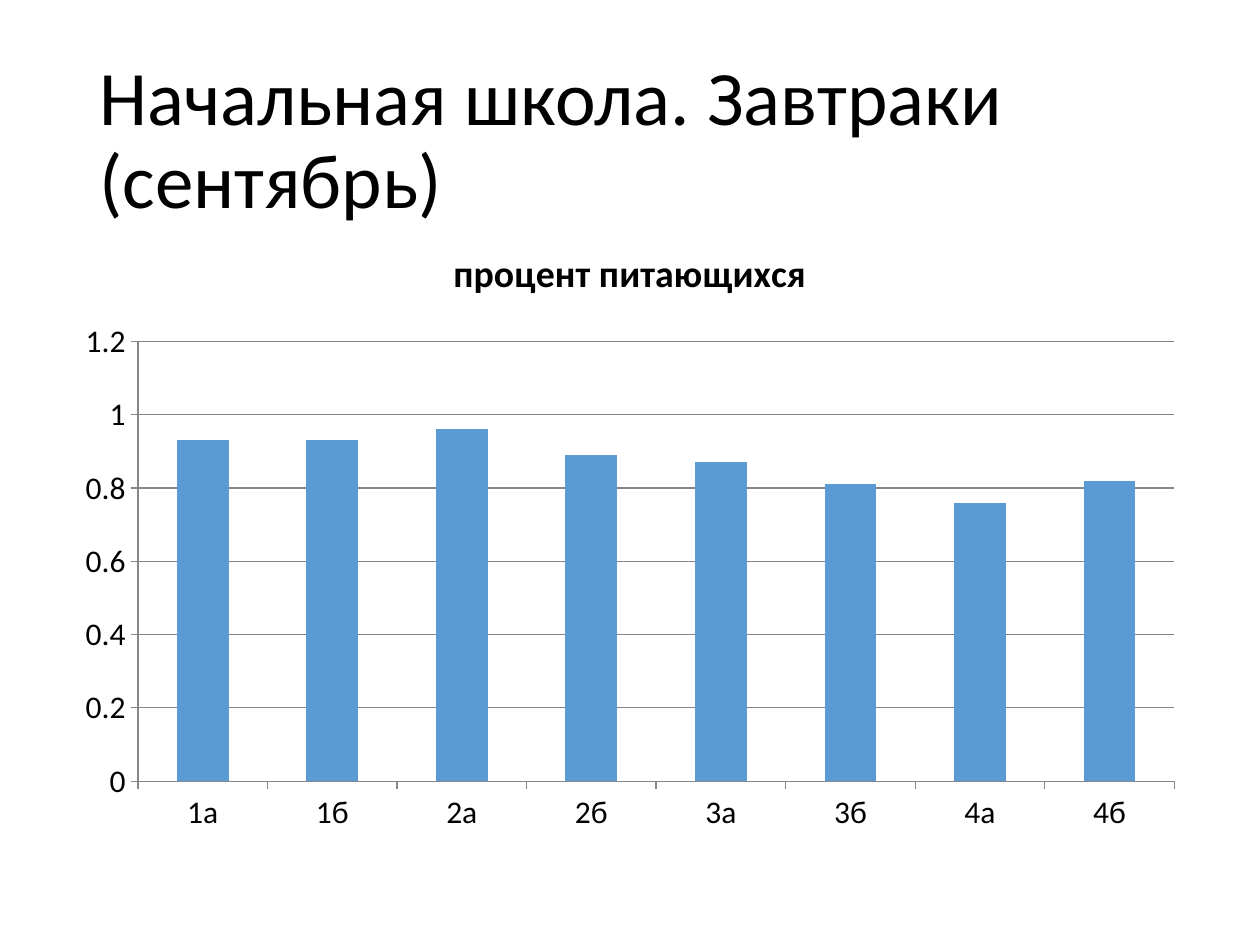
from pptx import Presentation
from pptx.chart.data import CategoryChartData
from pptx.dml.color import RGBColor
from pptx.enum.chart import XL_CHART_TYPE, XL_TICK_MARK
from pptx.enum.text import MSO_ANCHOR, MSO_AUTO_SIZE, PP_ALIGN
from pptx.util import Pt

EMU_PER_PX = 9144  # 100 px to the inch
TITLE_ONLY = 5
COLORS = {"text": "000000", "bar": "5B9BD5", "axis": "878787"}
MEALS = {"1а": 0.93, "1б": 0.93, "2а": 0.96, "2б": 0.89,
         "3а": 0.87, "3б": 0.81, "4а": 0.76, "4б": 0.82}


def px(*lengths):
    """Turn px lengths into a list of EMU."""
    return [length * EMU_PER_PX for length in lengths]


class SlideBuilder:
    """Holds the style and the current slide."""

    font_name = "Calibri"

    def __init__(self, presentation):
        self.slide = presentation.slides.add_slide(presentation.slide_layouts[TITLE_ONLY])

    def color(self, name):
        return RGBColor.from_string(COLORS[name])

    def style_font(self, font, size, bold=False):
        font.name = self.font_name
        font.size = Pt(size)
        font.bold = bold
        font.color.rgb = self.color("text")

    def add_title(self, text, box):
        title = self.slide.shapes.title
        title.left, title.top, title.width, title.height = px(*box)
        text_frame = title.text_frame
        text_frame.text = text
        text_frame.word_wrap = True
        text_frame.auto_size = MSO_AUTO_SIZE.NONE
        text_frame.vertical_anchor = MSO_ANCHOR.MIDDLE
        paragraph = text_frame.paragraphs[0]
        paragraph.alignment = PP_ALIGN.LEFT
        paragraph.line_spacing = 0.9
        for run in paragraph.runs:
            self.style_font(run.font, 44)

    def add_column_chart(self, name, values, box):
        data = CategoryChartData()
        data.categories = list(values)
        data.add_series(name, list(values.values()))
        chart = self.slide.shapes.add_chart(
            XL_CHART_TYPE.COLUMN_CLUSTERED, *px(*box), data).chart
        self.style_font(chart.font, 18)
        chart.has_legend = False
        chart.has_title = True
        title_frame = chart.chart_title.text_frame
        title_frame.text = name
        self.style_font(title_frame.paragraphs[0].runs[0].font, 21.6, bold=True)

        plot = chart.plots[0]
        plot.vary_by_categories = False
        plot.gap_width = 150
        fill = plot.series[0].format.fill
        fill.solid()
        fill.fore_color.rgb = self.color("bar")

        value_axis = chart.value_axis
        value_axis.has_major_gridlines = True
        for axis in (chart.category_axis, value_axis):
            axis.major_tick_mark = XL_TICK_MARK.OUTSIDE
            self.style_line(axis.format.line)
        self.style_line(value_axis.major_gridlines.format.line)

    def style_line(self, line):
        line.color.rgb = self.color("axis")
        line.width = Pt(0.75)


def main():
    presentation = Presentation()
    presentation.slide_width, presentation.slide_height = px(1000, 750)
    builder = SlideBuilder(presentation)
    builder.add_title("Начальная школа. Завтраки\v(сентябрь)", (69, 40, 862, 145))
    builder.add_column_chart("процент питающихся", MEALS, (50, 175, 900, 495))
    presentation.save("out.pptx")


if __name__ == "__main__":
    main()
